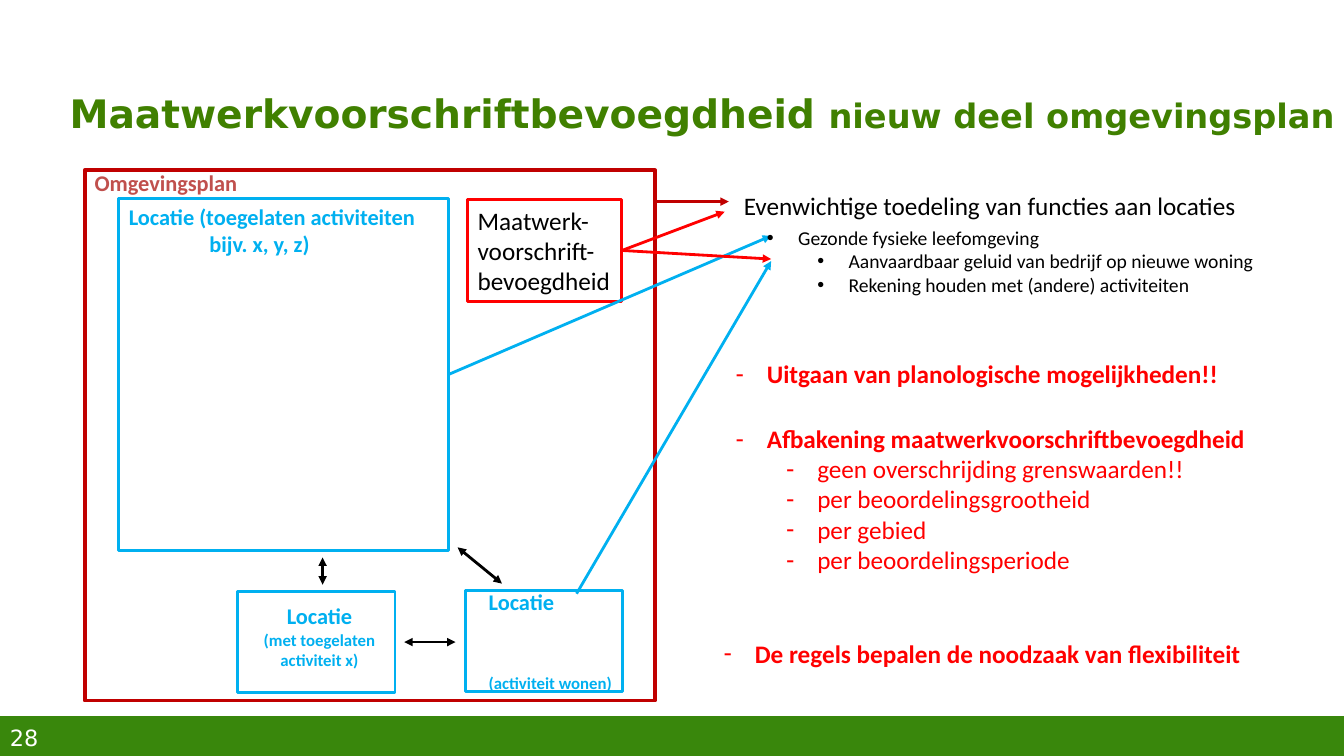
from pptx import Presentation
from pptx.dml.color import RGBColor
from pptx.enum.shapes import MSO_CONNECTOR, MSO_SHAPE
from pptx.enum.text import MSO_ANCHOR, PP_ALIGN
from pptx.oxml.xmlchemy import OxmlElement
from pptx.util import Inches, Pt

RECTANGLE = MSO_SHAPE.RECTANGLE
STRAIGHT = MSO_CONNECTOR.STRAIGHT
LEFT, CENTER = PP_ALIGN.LEFT, PP_ALIGN.CENTER
MIDDLE = MSO_ANCHOR.MIDDLE
TITLE_ONLY = 5
RIGHT_SIDE = 3
CELL = Inches(0.1)
HANGING = 0.31
LEVEL_STEP = 0.5

GREEN, BAR_GREEN, WHITE, BLACK = "408000", "39870C", "FFFFFF", "000000"
BLUE, RED, DARK_RED, SOFT_RED = "00B0F0", "FF0000", "C00000", "C0504D"

HEADING = {"name": "DejaVu Sans", "size": Pt(28), "bold": True}
NUMBER = {"name": "DejaVu Sans", "size": Pt(16)}
LABEL = {"name": "Calibri", "size": Pt(16), "bold": True}
SMALL_LABEL = {**LABEL, "size": Pt(12)}
PLAIN = {"name": "Calibri", "size": Pt(18), "bold": False}
SMALL_PLAIN = {**PLAIN, "size": Pt(14)}
STRONG = {**PLAIN, "bold": True}


def grid(*cells):
    """Turn counts of grid cells into slide lengths."""
    return [round(cell * CELL) for cell in cells]


def color(target, value):
    """Give a font, line or fill a hex colour."""
    if hasattr(target, "solid"):
        target.solid()
        target.fore_color.rgb = RGBColor.from_string(value)
    elif hasattr(target, "fill") and hasattr(target, "width"):
        color(target.fill, value)
    else:
        target.color.rgb = RGBColor.from_string(value)


def apply(target, values):
    """Set the attributes of a target from a dict of format values."""
    for name, value in values.items():
        setattr(target, name, value)


def add_box(slide, area, line, width=2, fill=None):
    """Add a rectangle with an outline and an optional fill."""
    shape = slide.shapes.add_shape(RECTANGLE, *grid(*area))
    shape.shadow.inherit = False
    color(shape.line, line)
    shape.line.width = Pt(width)
    if fill:
        color(shape.fill, fill)
    else:
        shape.fill.background()
    return shape


def write(frame, entries, text_color, align=LEFT):
    """Fill a text frame with (text, font values, paragraph values) entries."""
    for index, (text, font, layout) in enumerate(entries):
        paragraph = frame.paragraphs[0] if index == 0 else frame.add_paragraph()
        paragraph.alignment = align
        apply(paragraph, layout)
        run = paragraph.add_run()
        run.text = text
        apply(run.font, font)
        color(run.font, text_color)


def add_text(slide, area, entries, text_color, wrap=False, align=LEFT):
    """Add a text box and return it."""
    shape = slide.shapes.add_textbox(*grid(*area))
    shape.text_frame.word_wrap = wrap
    write(shape.text_frame, entries, text_color, align)
    return shape


def add_list(slide, area, items, text_color, mark):
    """Add a list of (text, level, font values) items with hanging marks."""
    entries = [(text, font, {"level": level}) for text, level, font in items]
    shape = add_text(slide, area, entries, text_color)
    for paragraph in shape.text_frame.paragraphs:
        properties = paragraph._p.get_or_add_pPr()
        properties.set("marL", str(Inches(HANGING + LEVEL_STEP * paragraph.level)))
        properties.set("indent", str(-Inches(HANGING)))
        font = OxmlElement("a:buFont")
        font.set("typeface", "Arial")
        bullet = OxmlElement("a:buChar")
        bullet.set("char", mark)
        properties.extend([font, bullet])


def add_arrow(slide, start, end, line, both=False, source=None):
    """Add an arrow, joined to the right side of a source box if given."""
    arrow = slide.shapes.add_connector(STRAIGHT, *grid(*start, *end))
    if source is not None:
        arrow.begin_connect(source, RIGHT_SIDE)
    color(arrow.line, line)
    arrow.line.width = Pt(2)
    outline = arrow.line._get_or_add_ln()
    for tag in ["a:headEnd", "a:tailEnd"] if both else ["a:tailEnd"]:
        tip = OxmlElement(tag)
        tip.set("type", "triangle")
        outline.append(tip)
    arrow._element.spPr.append(OxmlElement("a:effectLst"))


def add_title(slide):
    """Place the title with its smaller second part."""
    title = slide.shapes.title
    title.left, title.top, title.width, title.height = grid(5.9, 7.9, 127.4, 7.2)
    frame = title.text_frame
    apply(frame, {"word_wrap": True, "vertical_anchor": MIDDLE, "margin_right": 0})
    heading = [("Maatwerkvoorschriftbevoegdheid ", HEADING, {"line_spacing": 0.9})]
    write(frame, heading, GREEN)
    run = frame.paragraphs[0].add_run()
    run.text = "nieuw deel omgevingsplan"
    apply(run.font, {**HEADING, "size": Pt(24)})
    color(run.font, GREEN)


def add_plan(slide):
    """Draw the plan with its locations and the arrows between them."""
    activities = add_box(slide, (11.8, 19.7, 32.7, 34.9), BLUE)
    add_text(slide, (11.8, 19.7, 33.4, 6.4), [
        ("Locatie (toegelaten activiteiten", LABEL, {}),
        ("bijv. x, y, z)", LABEL, {}),
    ], BLUE, wrap=True).text_frame.paragraphs[1]._p.get_or_add_pPr().set(
        "marL", str(Inches(0.8)))
    add_box(slide, (8.4, 16.9, 56.6, 52.6), DARK_RED, 2.75)
    add_text(slide, (8.4, 16.3, 16.4, 3.7), [("Omgevingsplan", LABEL, {})], SOFT_RED)
    add_box(slide, (23.6, 58.7, 15.6, 10), BLUE)
    add_text(slide, (24.9, 59.2, 13.6, 7.9), [
        ("Locatie", LABEL, {}),
        ("(met toegelaten", SMALL_LABEL, {"space_before": Pt(1)}),
        ("activiteit x)", SMALL_LABEL, {}),
    ], BLUE, align=CENTER)
    add_box(slide, (46.2, 58.6, 15.6, 10), BLUE)
    add_text(slide, (47.5, 57.9, 14.4, 11.4), [
        ("Locatie", LABEL, {}),
        ("(activiteit wonen)", SMALL_LABEL, {"space_before": Pt(41)}),
    ], BLUE)
    for start, end in [((45.4, 54.3), (49.8, 57.9)),
                       ((32, 55.3), (32, 58)),
                       ((45.2, 63.7), (40.1, 63.7))]:
        add_arrow(slide, start, end, BLACK, both=True)
    return activities


def add_power(slide):
    """Draw the box that names the power."""
    power = add_box(slide, (46.4, 19.8, 15.3, 10.1), RED)
    power.text_frame.word_wrap = False
    lines = ["Maatwerk-", "voorschrift-", "bevoegdheid"]
    write(power.text_frame, [(line, PLAIN, {}) for line in lines], BLACK)
    return power


def add_goals(slide, activities, power):
    """Write the goals and the arrows that lead to them."""
    add_arrow(slide, (44.5, 37.2), (76.5, 23.4), BLUE, source=activities)
    add_arrow(slide, (64.9, 20), (72.3, 20), DARK_RED)
    add_arrow(slide, (57.2, 58.9), (76.5, 25.9), BLUE)
    for end in [(76.5, 25.7), (71.9, 21)]:
        add_arrow(slide, (61.7, 24.8), end, RED, source=power)
    add_text(slide, (72.8, 18.4, 51.5, 4), [
        ("Evenwichtige toedeling van functies aan locaties", PLAIN, {})], BLACK)
    add_list(slide, (75.1, 21.9, 50.8, 8.1), [
        ("Gezonde fysieke leefomgeving", 0, SMALL_PLAIN),
        ("Aanvaardbaar geluid van bedrijf op nieuwe woning", 1, SMALL_PLAIN),
        ("Rekening houden met (andere) activiteiten", 1, SMALL_PLAIN),
    ], BLACK, "•")


def add_rules(slide):
    """Write the red rules on the right."""
    limits = ["geen overschrijding grenswaarden!!", "per beoordelingsgrootheid",
              "per gebied", "per beoordelingsperiode"]
    add_list(slide, (72, 35.1, 50.3, 4), [
        ("Uitgaan van planologische mogelijkheden!!", 0, STRONG)], RED, "-")
    add_list(slide, (72, 41.5, 53, 16.2), [
        ("Afbakening maatwerkvoorschriftbevoegdheid", 0, STRONG),
        *[(limit, 1, PLAIN) for limit in limits]], RED, "-")
    add_list(slide, (70.8, 62.8, 56.2, 4), [
        ("De regels bepalen de noodzaak van flexibiliteit", 0, STRONG)], RED, "-")


def main():
    """Build the slide and save it."""
    presentation = Presentation()
    presentation.slide_width, presentation.slide_height = grid(133.33, 75)
    slide = presentation.slides.add_slide(presentation.slide_layouts[TITLE_ONLY])
    add_box(slide, (0, 71.2, 133.33, 3.8), BAR_GREEN, fill=BAR_GREEN)
    add_title(slide)
    activities = add_plan(slide)
    power = add_power(slide)
    add_goals(slide, activities, power)
    add_rules(slide)
    number = add_text(slide, (0, 71.3, 42.2, 3.7), [("28", NUMBER, {})], WHITE, wrap=True)
    number.text_frame.vertical_anchor = MIDDLE
    presentation.save("out.pptx")


if __name__ == "__main__":
    main()
